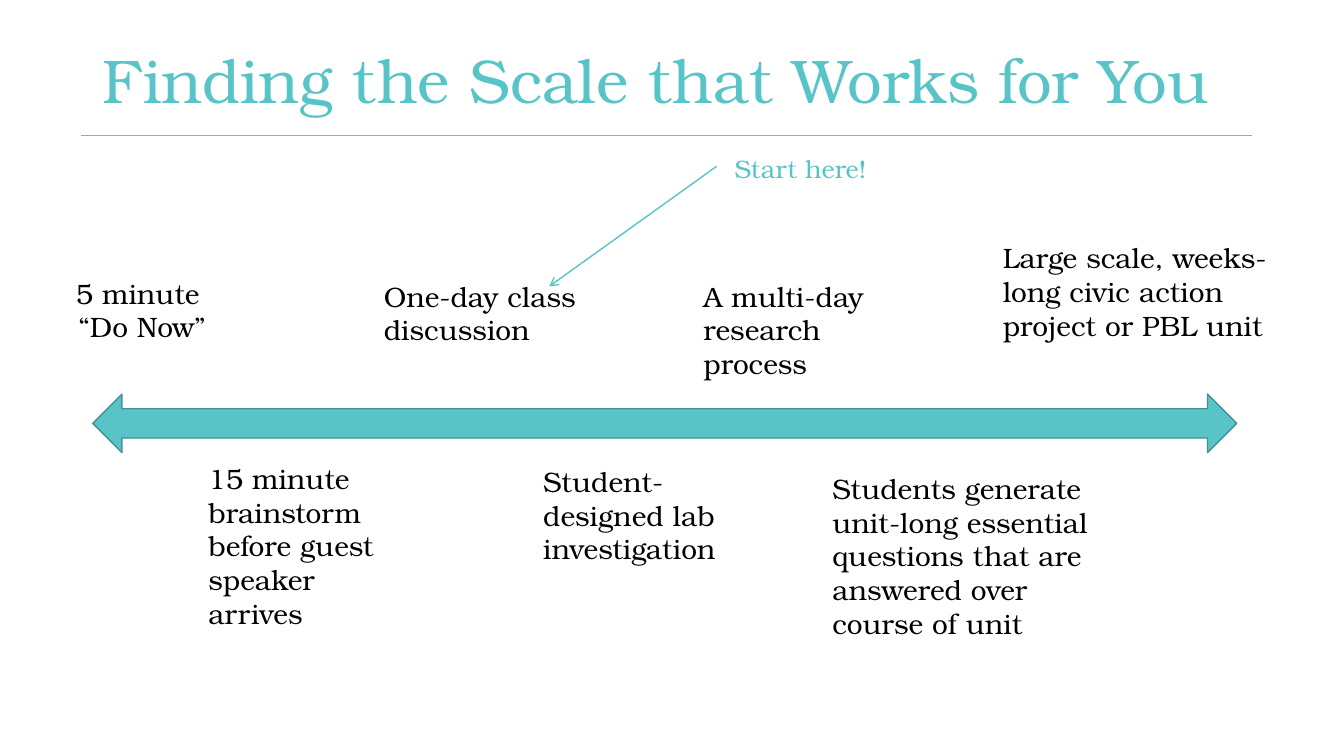
from dataclasses import dataclass

from lxml import etree
from pptx import Presentation
from pptx.dml.color import RGBColor
from pptx.enum import shapes, text
from pptx.oxml import ns
from pptx.util import Pt

FONT = "TeX Gyre Bonum"
TEAL, DARK_TEAL, GREY, BLACK = "59C4C7", "429193", "A6A6A6", "000000"


@dataclass
class Label:
    wording: str
    left: float
    top: float
    width: float
    height: float
    size: float = 20
    colour: str = BLACK
    align: text.PP_ALIGN = text.PP_ALIGN.LEFT


LABELS = [
    Label("5 minute \n“Do Now”", 38.2, 193.7, 126.7, 55.4, align=text.PP_ALIGN.CENTER),
    Label("One-day class discussion", 267.1, 195.8, 151.9, 79.9),
    Label("A multi-day research process", 495.4, 195.8, 177.8, 79.9),
    Label("Large scale, weeks- long civic action project or PBL unit", 709.2, 168.5, 216, 79.9),
    Label("15 minute brainstorm before guest speaker arrives", 141.8, 326.2, 157.7, 128.2),
    Label("Student- designed lab investigation", 380.9, 328.3, 152.6, 79.9),
    Label("Students generate unit-long essential questions that are answered over course of unit",
          587.5, 333.4, 213.1, 128.2),
    Label("Start here!", 517.7, 105.8, 269.3, 28.8, size=18, colour=TEAL),
]


def rgb(colour: str) -> RGBColor:
    return RGBColor.from_string(colour)


def style_text(frame, size: float, colour: str, align: text.PP_ALIGN) -> None:
    for paragraph in frame.paragraphs:
        paragraph.alignment = align
        for run in paragraph.runs:
            run.font.name = FONT
            run.font.size = Pt(size)
            run.font.color.rgb = rgb(colour)


def add_label(slide, label: Label) -> None:
    box = slide.shapes.add_textbox(Pt(label.left), Pt(label.top), Pt(label.width), Pt(label.height))
    frame = box.text_frame
    frame.word_wrap = True
    frame.auto_size = text.MSO_AUTO_SIZE.SHAPE_TO_FIT_TEXT
    frame.text = label.wording
    style_text(frame, label.size, label.colour, label.align)


def add_line(slide, start: tuple[float, float], end: tuple[float, float],
             colour: str, width: float, arrow: bool = False) -> None:
    line = slide.shapes.add_connector(
        shapes.MSO_CONNECTOR.STRAIGHT, *(Pt(value) for value in start + end))
    line.line.color.rgb = rgb(colour)
    line.line.width = Pt(width)
    if arrow:
        etree.SubElement(line.line._get_or_add_ln(), ns.qn("a:tailEnd"), type="arrow")
    etree.SubElement(line._element.spPr, ns.qn("a:effectLst"))


def add_title(slide) -> None:
    title = slide.shapes.title
    title.left, title.top, title.width, title.height = Pt(66.2), Pt(7.2), Pt(828), Pt(104.4)
    frame = title.text_frame
    frame.text = "Finding the Scale that Works for You"
    frame.word_wrap = True
    frame.auto_size = text.MSO_AUTO_SIZE.NONE
    frame.vertical_anchor = text.MSO_ANCHOR.MIDDLE
    frame.paragraphs[0].line_spacing = 0.9
    style_text(frame, 44, TEAL, text.PP_ALIGN.LEFT)


def add_scale(slide) -> None:
    scale = slide.shapes.add_shape(
        shapes.MSO_SHAPE.LEFT_RIGHT_ARROW, Pt(66.2), Pt(281.5), Pt(817.2), Pt(41.8))
    scale.shadow.inherit = False
    scale.fill.solid()
    scale.fill.fore_color.rgb = rgb(TEAL)
    scale.line.color.rgb = rgb(DARK_TEAL)
    scale.line.width = Pt(1)


def main() -> None:
    deck = Presentation()
    deck.slide_width, deck.slide_height = Pt(960), Pt(540)
    slide = deck.slides.add_slide(deck.slide_layouts.get_by_name("Title Only"))
    add_line(slide, (57.6, 96.8), (894.2, 96.8), GREY, 0.5)
    add_title(slide)
    add_scale(slide)
    for label in LABELS:
        add_label(slide, label)
    add_line(slide, (511.9, 118.8), (392.4, 204.5), TEAL, 1, arrow=True)
    deck.save("out.pptx")


if __name__ == "__main__":
    main()
